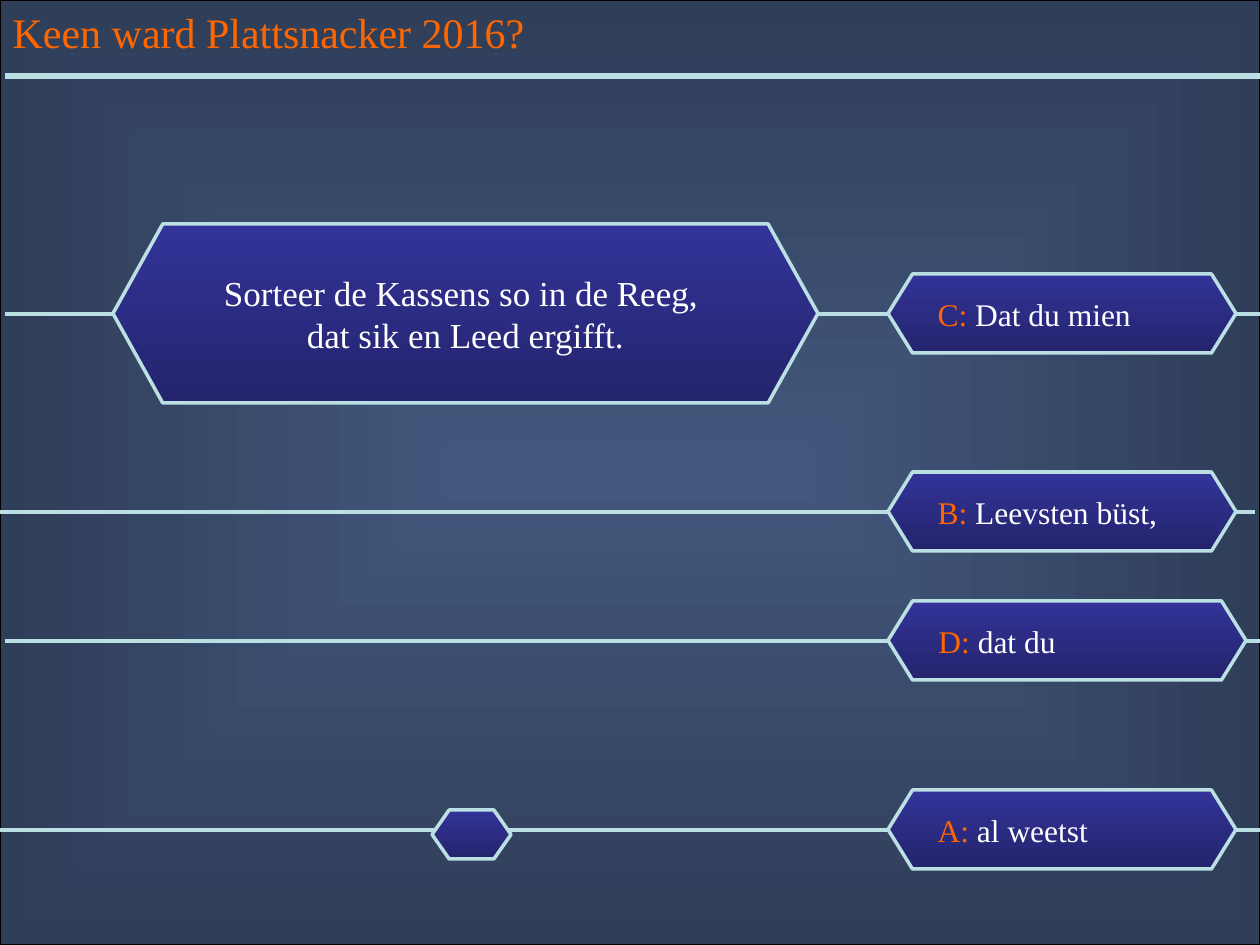
from lxml import etree
from pptx import Presentation
from pptx.dml.color import RGBColor
from pptx.enum.shapes import MSO_CONNECTOR, MSO_SHAPE
from pptx.enum.text import MSO_ANCHOR, MSO_AUTO_SIZE, PP_ALIGN
from pptx.oxml import parse_xml
from pptx.oxml.ns import nsdecls, qn
from pptx.util import Emu, Pt

RECTANGLE, HEXAGON = MSO_SHAPE.RECTANGLE, MSO_SHAPE.HEXAGON
STRAIGHT = MSO_CONNECTOR.STRAIGHT
LEFT, CENTER = PP_ALIGN.LEFT, PP_ALIGN.CENTER
TOP, MIDDLE = MSO_ANCHOR.TOP, MSO_ANCHOR.MIDDLE
PX = 914400 / 126
FONT = "Times New Roman"
COLORS = {"backdrop": "43587D", "panel": "333399", "line": "BBE0E3",
          "accent": "FF6600", "text": "FFFFFF", "border": "000000"}
CENTER_OUT = ('<a:path path="shape"><a:fillToRect l="50000" t="50000" '
              'r="50000" b="50000"/></a:path>')
DOWNWARD = '<a:lin ang="5400000" scaled="1"/>'


def rgb(name):
    return RGBColor.from_string(COLORS[name])


def add_panel(kind, left, top, width, height, fill, direction, line, line_width):
    """Add a shape whose fill runs from a colour to its dark shade."""
    shape = page.shapes.add_shape(
        kind, *(Emu(round(n * PX)) for n in (left, top, width, height)))
    shape.shadow.inherit = False
    shape.line.color.rgb = rgb(line)
    shape.line.width = Pt(line_width)
    color = COLORS[fill]
    gradient = parse_xml(
        f'<a:gradFill {nsdecls("a")} rotWithShape="1"><a:gsLst>'
        f'<a:gs pos="0"><a:srgbClr val="{color}"/></a:gs>'
        f'<a:gs pos="100000"><a:srgbClr val="{color}">'
        f'<a:shade val="46275"/></a:srgbClr></a:gs>'
        f'</a:gsLst>{direction}</a:gradFill>')
    shape._element.spPr.find(qn("a:prstGeom")).addnext(gradient)
    return shape


deck = Presentation()
deck.slide_width, deck.slide_height = Emu(round(1260 * PX)), Emu(round(945 * PX))
page = deck.slides.add_slide(deck.slide_layouts[5])

# Backdrop
add_panel(RECTANGLE, 0, 0, 1260, 945, "backdrop", CENTER_OUT, "border", 0.75)

# Horizontal lines: start, height, line width
for left, y, weight in [(0, 830, 2.25), (5, 641, 2.25), (-5, 512, 2.25),
                        (5, 314, 2.25), (5, 76, 3)]:
    rule = page.shapes.add_connector(
        STRAIGHT, *(Emu(round(n * PX)) for n in (left, y, left + 1260, y)))
    rule.line.color.rgb = rgb("line")
    rule.line.width = Pt(weight)
    etree.SubElement(rule._element.spPr, qn("a:effectLst"))

# Question
question = add_panel(HEXAGON, 113, 224, 705, 179, "panel", DOWNWARD, "line", 2)
question.adjustments[0] = 0.278
frame = question.text_frame
frame.word_wrap = False
frame.vertical_anchor = MIDDLE
frame.text = "Sorteer de Kassens so in de Reeg, \ndat sik en Leed ergifft."
for para in frame.paragraphs:
    para.alignment = CENTER
    para.font.name, para.font.size = FONT, Pt(20)
    para.font.color.rgb = rgb("text")

# Answers, each centred on its line
for letter, answer, y, width in [("C", "Dat du mien", 314, 348),
                                 ("B", "Leevsten büst,", 512, 348),
                                 ("D", "dat du", 641, 358),
                                 ("A", "al weetst", 830, 348)]:
    box = add_panel(HEXAGON, 888, y - 40, width, 79, "panel", DOWNWARD, "line", 2)
    box.adjustments[0] = 0.31
    frame = box.text_frame
    frame.word_wrap = False
    frame.vertical_anchor = MIDDLE
    para = frame.paragraphs[0]
    para.alignment = LEFT
    para.font.name, para.font.size = FONT, Pt(18)
    for words, color in [(f"{letter}: ", "accent"), (answer, "text")]:
        span = para.add_run()
        span.text = words
        span.font.color.rgb = rgb(color)

# Small empty hexagon
marker = add_panel(HEXAGON, 432, 810, 79, 49, "panel", DOWNWARD, "line", 2)
marker.adjustments[0] = 0.35

# Title, brought to the front
title = page.shapes.title
title.left, title.top = Emu(0), Emu(0)
title.width, title.height = Emu(round(645 * PX)), Emu(round(63 * PX))
title.text_frame.text = "Keen ward Plattsnacker 2016?"
title.text_frame.vertical_anchor = TOP
title.text_frame.auto_size = MSO_AUTO_SIZE.NONE
para = title.text_frame.paragraphs[0]
para.alignment = LEFT
para.font.name, para.font.size = FONT, Pt(24)
para.font.color.rgb = rgb("accent")
page.shapes._spTree.append(title._element)

deck.save("out.pptx")
